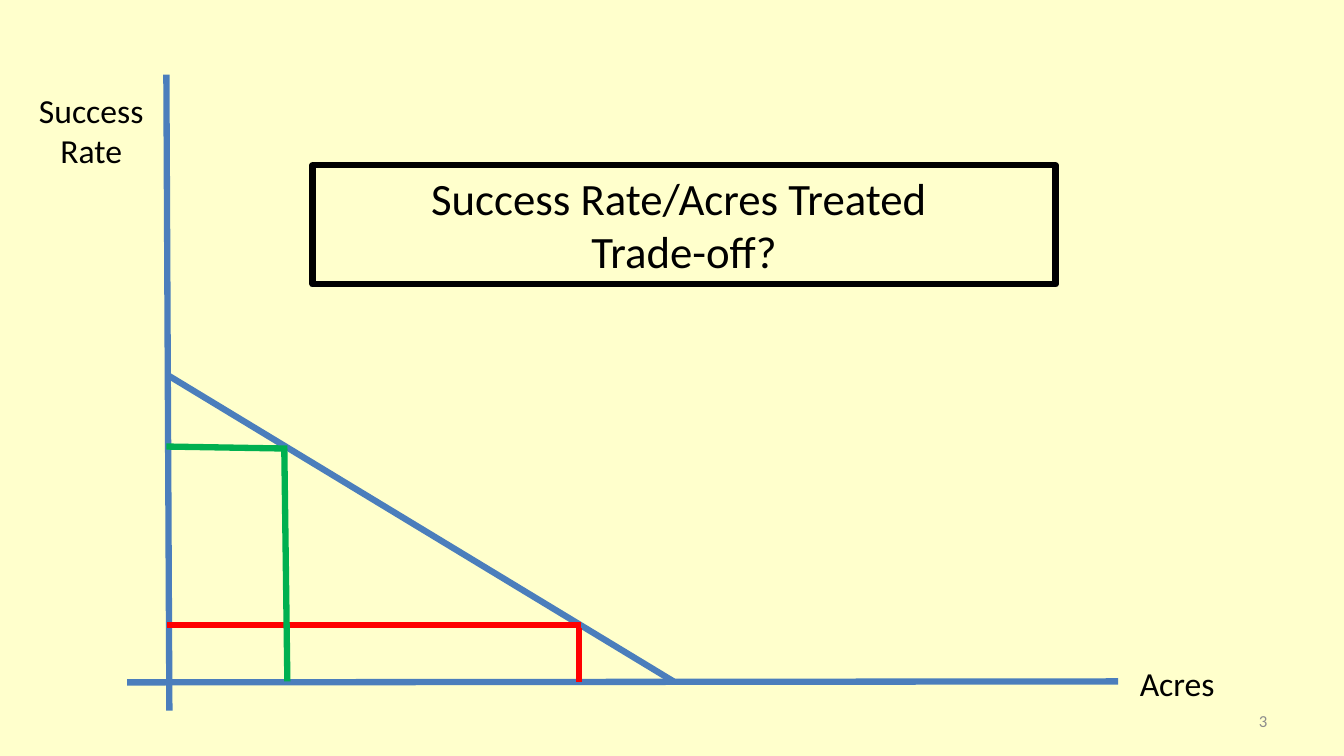
from lxml.etree import SubElement
from pptx import Presentation
from pptx.dml.color import RGBColor
from pptx.enum.shapes import MSO_CONNECTOR
from pptx.enum.text import MSO_ANCHOR, MSO_AUTO_SIZE, PP_ALIGN
from pptx.oxml.ns import qn
from pptx.util import Inches, Pt

CREAM = RGBColor(0xFF, 0xFF, 0xCC)
BLACK = RGBColor(0x00, 0x00, 0x00)
GRAY = RGBColor(0x8C, 0x8C, 0x8C)
BLUE = RGBColor(0x4B, 0x7E, 0xBC)
RED = RGBColor(0xFF, 0x00, 0x00)
GREEN = RGBColor(0x00, 0xB0, 0x50)
FONT = "Calibri"
LINE_WIDTH = Pt(4.5)


def place(shape, left, top, width, height):
    shape.left, shape.top = Inches(left), Inches(top)
    shape.width, shape.height = Inches(width), Inches(height)


def write_text(shape, lines, size, color=BLACK, align=PP_ALIGN.CENTER,
               anchor=MSO_ANCHOR.TOP):
    frame = shape.text_frame
    frame.text = "\n".join(lines)
    frame.word_wrap = True
    frame.auto_size = MSO_AUTO_SIZE.NONE
    frame.vertical_anchor = anchor
    for para in frame.paragraphs:
        para.alignment = align
        for span in para.runs:
            span.font.name = FONT
            span.font.size = Pt(size)
            span.font.color.rgb = color


def add_label(slide, text, bounds, size=24, **style):
    box = slide.shapes.add_textbox(*(Inches(length) for length in bounds))
    write_text(box, [text], size, **style)


def add_line(slide, start, end, color):
    line = slide.shapes.add_connector(
        MSO_CONNECTOR.STRAIGHT, *(Inches(length) for length in start + end))
    line.line.color.rgb = color
    line.line.width = LINE_WIDTH
    SubElement(line._element.spPr, qn("a:effectLst"))


def add_boxed_title(slide, lines):
    title = slide.shapes.title
    place(title, 3.1, 1.64, 7.37, 1.18)
    title.line.color.rgb = BLACK
    title.line.width = LINE_WIDTH
    write_text(title, lines, 32)


def main():
    deck = Presentation()
    deck.slide_width, deck.slide_height = Inches(13.33), Inches(7.5)
    slide = deck.slides.add_slide(deck.slide_layouts[5])
    slide.background.fill.solid()
    slide.background.fill.fore_color.rgb = CREAM

    add_label(slide, "3", (9.56, 6.95, 3.11, 0.4), size=12, color=GRAY,
              align=PP_ALIGN.RIGHT, anchor=MSO_ANCHOR.MIDDLE)
    add_label(slide, "Success Rate", (0.21, 0.84, 1.39, 0.91))
    add_label(slide, "Acres", (10.98, 6.53, 1.39, 0.5))
    add_boxed_title(slide, ["Success Rate/Acres Treated ", "Trade-off?"])

    axes = [((1.65, 0.74), (1.68, 7.05)), ((1.26, 6.77), (11.09, 6.76))]
    trade_off = [((1.66, 3.72), (6.68, 6.76))]
    many_acres = [((1.66, 6.2), (5.76, 6.2)), ((5.74, 6.23), (5.74, 6.77))]
    few_acres = [((1.65, 4.43), (2.85, 4.45)), ((2.82, 4.45), (2.85, 6.76))]
    for color, segments in ((BLUE, axes + trade_off), (RED, many_acres),
                            (GREEN, few_acres)):
        for start, end in segments:
            add_line(slide, start, end, color)

    deck.save("out.pptx")


if __name__ == "__main__":
    main()
